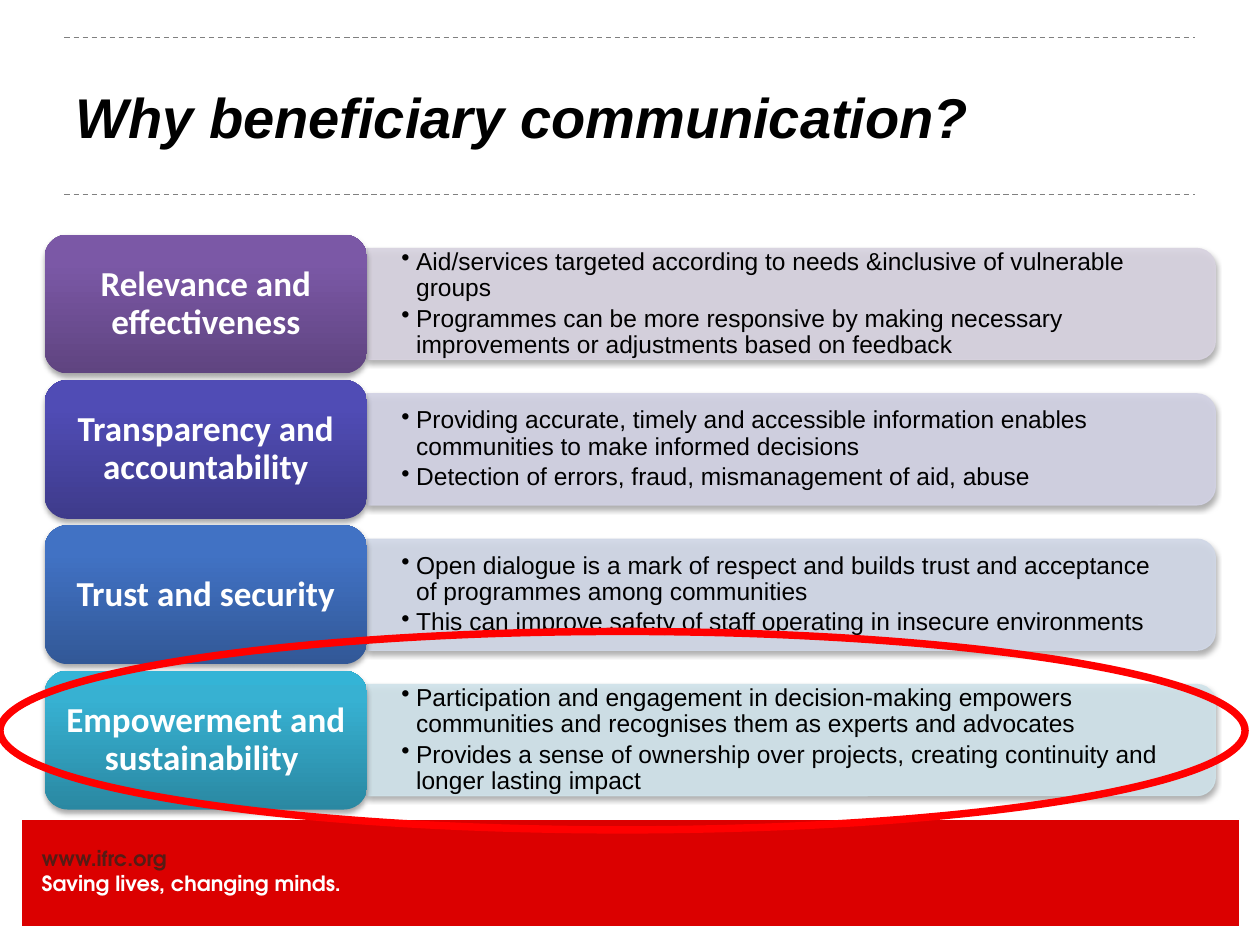
from dataclasses import dataclass

from lxml import etree
from pptx import Presentation
from pptx import util as u
from pptx.dml.color import RGBColor
from pptx.enum import dml, shapes, text
from pptx.oxml import parse_xml
from pptx.oxml.ns import qn

NS = 'xmlns:a="http://schemas.openxmlformats.org/drawingml/2006/main"'


@dataclass(frozen=True)
class Theme:
    black: str = "000000"
    white: str = "FFFFFF"
    rule: str = "808080"
    footer: str = "DB0000"
    address: str = "551C15"
    highlight: str = "FF0000"
    body_font: str = "Arial"
    label_font: str = "Calibri"
    footer_font: str = "TeX Gyre Adventor"
    title_size: float = 32
    label_size: float = 20
    body_size: float = 14
    footer_size: float = 12
    hairline: float = 0.75
    ring: float = 4.25


class SlideBuilder:
    def __init__(self, slide, theme):
        self.slide = slide
        self.theme = theme

    def shape(self, kind, x, y, w, h, fill=None, line=None, width=None):
        shape = self.slide.shapes.add_shape(kind, u.Cm(x), u.Cm(y), u.Cm(w), u.Cm(h))
        shape.shadow.inherit = False
        if fill:
            shape.fill.solid()
            shape.fill.fore_color.rgb = RGBColor.from_string(fill)
        else:
            shape.fill.background()
        if line:
            shape.line.color.rgb = RGBColor.from_string(line)
            shape.line.width = u.Pt(width or self.theme.hairline)
        else:
            shape.line.fill.background()
        return shape

    def rule(self, x1, x2, y):
        rule = self.slide.shapes.add_connector(
            shapes.MSO_CONNECTOR.STRAIGHT, u.Cm(x1), u.Cm(y), u.Cm(x2), u.Cm(y))
        rule.line.color.rgb = RGBColor.from_string(self.theme.rule)
        rule.line.width = u.Pt(self.theme.hairline)
        rule.line.dash_style = dml.MSO_LINE.DASH
        etree.SubElement(rule._element.spPr, qn("a:effectLst"))

    def drop_shadow(self, shape):
        effects = shape._element.spPr.find(qn("a:effectLst"))
        effects.append(parse_xml(
            f'<a:outerShdw {NS} blurRad="{u.Pt(3.1)}" dist="{u.Pt(1.8)}" dir="5400000" '
            f'rotWithShape="0"><a:srgbClr val="{self.theme.black}">'
            '<a:alpha val="35000"/></a:srgbClr></a:outerShdw>'))

    def frame(self, shape, inset_x, inset_y, anchor=text.MSO_ANCHOR.MIDDLE):
        frame = shape.text_frame
        frame.word_wrap = True
        frame.vertical_anchor = anchor
        frame.margin_left = frame.margin_right = u.Cm(inset_x)
        frame.margin_top = frame.margin_bottom = u.Cm(inset_y)
        return frame

    def text_box(self, x, y, w, h, inset_x, inset_y, **options):
        box = self.slide.shapes.add_textbox(u.Cm(x), u.Cm(y), u.Cm(w), u.Cm(h))
        return self.frame(box, inset_x, inset_y, **options)

    def paragraphs(self, frame, lines, font, size, colors, bold=False, italic=False,
                   align=text.PP_ALIGN.LEFT, spacing=None, after=None, bullet_indent=None):
        """Fill a frame with one paragraph per line, each in its own colour."""
        for i, (line, color) in enumerate(zip(lines, colors)):
            paragraph = frame.paragraphs[0] if i == 0 else frame.add_paragraph()
            paragraph.text = line
            paragraph.alignment = align
            if spacing:
                paragraph.line_spacing = spacing
                paragraph.space_after = u.Pt(after)
            if bullet_indent:
                props = paragraph._p.get_or_add_pPr()
                props.set("marL", str(u.Cm(bullet_indent)))
                props.set("indent", str(-u.Cm(bullet_indent)))
                etree.SubElement(props, qn("a:buChar"), char="•")
            paragraph.font.name = font
            paragraph.font.size = u.Pt(size)
            paragraph.font.bold = bold
            paragraph.font.italic = italic
            paragraph.font.color.rgb = RGBColor.from_string(color)

    def panel(self, x, y, w, h, tint):
        """Bar rounded on its right side only: a top-rounded shape turned 90°."""
        panel = self.shape(shapes.MSO_SHAPE.ROUND_2_SAME_RECTANGLE,
                           x + (w - h) / 2, y - (w - h) / 2, h, w, tint, tint)
        panel.rotation = 90
        for color in panel._element.spPr.iter(qn("a:srgbClr")):
            etree.SubElement(color, qn("a:alpha"), val="90000")
        self.drop_shadow(panel)

    def bullets(self, x, y, w, h, lines):
        t = self.theme
        self.paragraphs(self.text_box(x, y, w, h, 0.69, 0.36), lines, t.body_font, t.body_size,
                        [t.black] * len(lines), spacing=0.9, after=2.1, bullet_indent=0.3)

    def label(self, x, y, w, h, caption, gradient):
        t = self.theme
        label = self.shape(shapes.MSO_SHAPE.ROUNDED_RECTANGLE, x, y, w, h)
        stops = "".join(
            f'<a:gs pos="{pos * 1000}"><a:srgbClr val="{color}"/></a:gs>'
            for pos, color in zip((0, 80, 100), gradient))
        no_fill = label._element.spPr.find(qn("a:noFill"))
        no_fill.getparent().replace(no_fill, parse_xml(
            f'<a:gradFill {NS} rotWithShape="1"><a:gsLst>{stops}</a:gsLst>'
            '<a:lin ang="16200000" scaled="0"/></a:gradFill>'))
        self.drop_shadow(label)
        self.paragraphs(self.frame(label, 0.2, 0.1), [caption], t.label_font, t.label_size,
                        [t.white], bold=True, align=text.PP_ALIGN.CENTER, spacing=0.9, after=7)


REASONS = [
    ("Relevance and effectiveness", "D8D3E0", ("5F4480", "7B58A6", "7C57A8"),
     ["Aid/services targeted according to needs &inclusive of vulnerable groups",
      "Programmes can be more responsive by making necessary improvements or "
      "adjustments based on feedback"]),
    ("Transparency and accountability", "D2D2E4", ("3E3B8B", "504CB5", "4F4BB8"),
     ["Providing accurate, timely and accessible information enables communities "
      "to make informed decisions",
      "Detection of errors, fraud, mismanagement of aid, abuse"]),
    ("Trust and security", "D1D8E7", ("325897", "4172C4", "3F72C7"),
     ["Open dialogue is a mark of respect and builds trust and acceptance of "
      "programmes among communities",
      "This can improve safety of staff operating in insecure environments"]),
    ("Empowerment and sustainability ", "D0E3EA", ("2A88A2", "37B1D2", "34B4D6"),
     ["Participation and engagement in decision-making empowers communities and "
      "recognises them as experts and advocates",
      "Provides a sense of ownership over projects, creating continuity and longer "
      "lasting impact"]),
]


def main():
    deck = Presentation()
    deck.slide_width, deck.slide_height = u.Cm(25.4), u.Cm(19.05)
    theme = Theme()
    page = SlideBuilder(deck.slides.add_slide(deck.slide_layouts[6]), theme)

    page.shape(shapes.MSO_SHAPE.RECTANGLE, 0.43, 16.51, 24.56, 2.18, theme.footer, theme.white)
    footer = page.text_box(0.84, 17.04, 8.69, 1.02, 0, 0, anchor=text.MSO_ANCHOR.TOP)
    page.paragraphs(footer, ["www.ifrc.org", "Saving lives, changing minds."], theme.footer_font,
                    theme.footer_size, [theme.address, theme.white], bold=True)

    for y in (0.76, 3.92):
        page.rule(1.3, 24.08, y)
    title = page.text_box(1.27, 0.76, 22.86, 3.18, 0.25, 0.13)
    page.paragraphs(title, ["Why beneficiary communication?"], theme.body_font, theme.title_size,
                    [theme.black], bold=True, italic=True)

    top, pitch = 4.73, 2.93
    left, label_width, label_height = 0.9, 6.5, 2.8
    panel_left = left + label_width
    panel_height, text_height = 2.24, 2.0
    for row, (caption, tint, gradient, points) in enumerate(REASONS):
        y = top + row * pitch
        page.panel(panel_left, y + (label_height - panel_height) / 2, 17.1, panel_height, tint)
        page.bullets(panel_left, y + (label_height - text_height) / 2, 17, text_height, points)
        page.label(left, y, label_width, label_height, caption, gradient)

    page.shape(shapes.MSO_SHAPE.OVAL, 0, 12.73, 25.1, 4, line=theme.highlight, width=theme.ring)
    deck.save("out.pptx")


if __name__ == "__main__":
    main()
